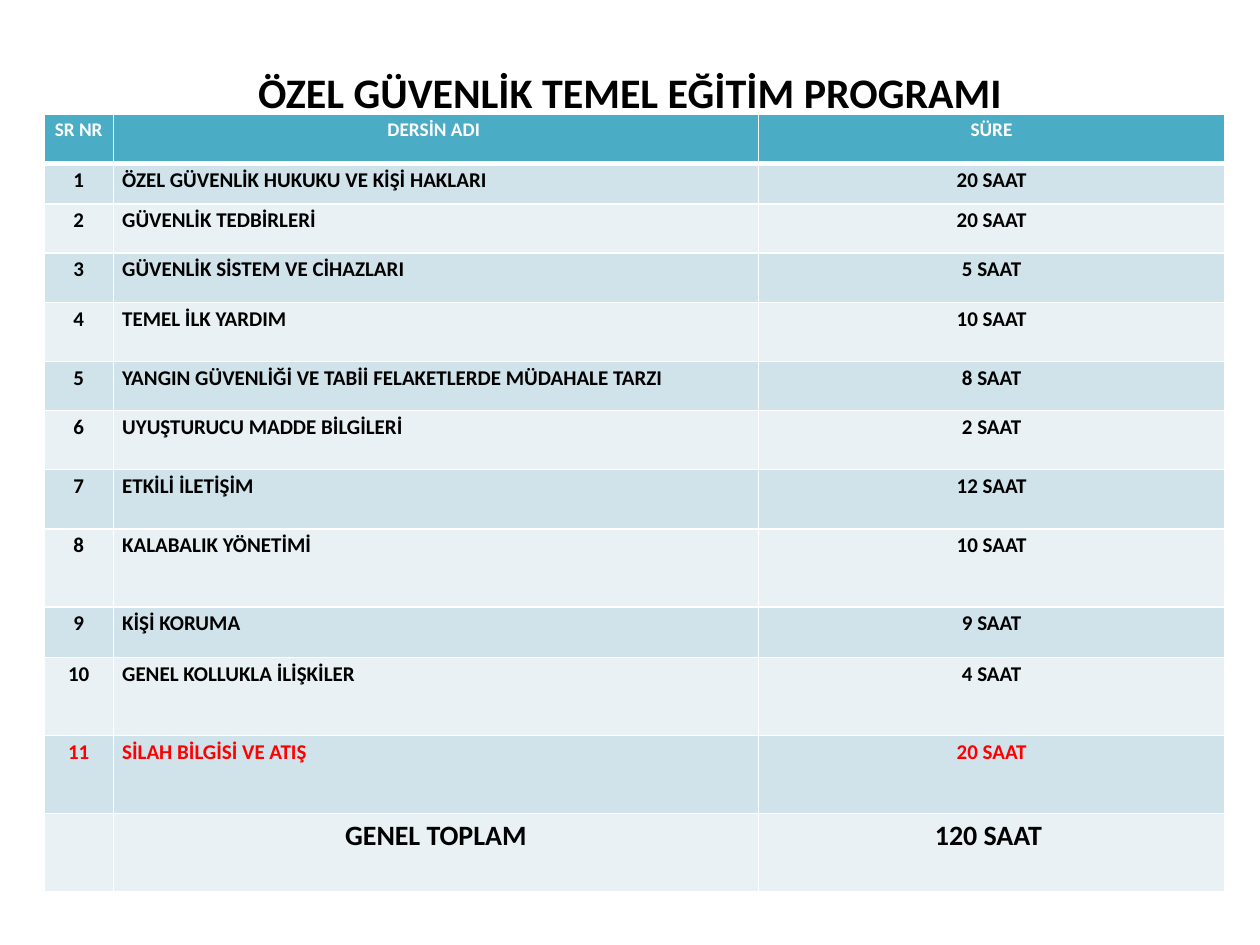
from dataclasses import dataclass

from lxml.etree import SubElement
from pptx import Presentation
from pptx.dml.color import RGBColor
from pptx.enum.text import MSO_ANCHOR as Anchor, PP_ALIGN as Align
from pptx.oxml import parse_xml
from pptx.oxml.ns import nsdecls, qn
from pptx.util import Inches, Pt

TITLE = "ÖZEL GÜVENLİK TEMEL EĞİTİM PROGRAMI"
HEADER = ("SR NR", "DERSİN ADI ", "SÜRE")
COURSES = [
    ("ÖZEL GÜVENLİK HUKUKU VE KİŞİ HAKLARI", 20),
    ("GÜVENLİK TEDBİRLERİ", 20),
    ("GÜVENLİK SİSTEM VE CİHAZLARI ", 5),
    ("TEMEL İLK YARDIM", 10),
    ("YANGIN GÜVENLİĞİ VE TABİİ FELAKETLERDE MÜDAHALE TARZI", 8),
    ("UYUŞTURUCU MADDE BİLGİLERİ", 2),
    ("ETKİLİ İLETİŞİM", 12),
    ("KALABALIK YÖNETİMİ", 10),
    ("KİŞİ KORUMA", 9),
    ("GENEL KOLLUKLA İLİŞKİLER", 4),
    ("SİLAH BİLGİSİ VE ATIŞ", 20),
]
TOTAL_LABEL = "GENEL TOPLAM"
COLUMN_WIDTHS = (0.55, 5.12, 3.7)
ROW_HEIGHTS = (0.39, 0.32, 0.39, 0.39, 0.47, 0.39, 0.47, 0.47, 0.62, 0.4, 0.62, 0.62, 0.62)


@dataclass(frozen=True)
class Theme:
    font: str = "Calibri"
    ink: str = "000000"
    white: str = "FFFFFF"
    accent: str = "FF0000"
    header: str = "4BACC6"
    bands: tuple = ("D0E3EA", "E9F1F5")
    title_size: int = 24
    header_size: int = 11
    body_size: int = 12
    total_size: int = 16


theme = Theme()


def write(para, text, size, color, align):
    para.alignment = align
    span = para.add_run()
    span.text = text
    span.font.name = theme.font
    span.font.size = Pt(size)
    span.font.bold = True
    span.font.color.rgb = RGBColor.from_string(color)


def add_borders(cell, bottom):
    props = cell._tc.get_or_add_tcPr()
    for index, (side, width) in enumerate((("L", 1), ("R", 1), ("T", 1), ("B", bottom))):
        line = parse_xml(f'<a:ln{side} {nsdecls("a")} w="{Pt(width)}"/>')
        fill = SubElement(line, qn("a:solidFill"))
        SubElement(fill, qn("a:srgbClr"), val=theme.white)
        props.insert(index, line)


def fill_cell(cell, text, fill, size, color, align, bottom=1):
    cell.fill.solid()
    cell.fill.fore_color.rgb = RGBColor.from_string(fill)
    cell.margin_left = cell.margin_right = Inches(0.07)
    cell.margin_top = cell.margin_bottom = 0
    add_borders(cell, bottom)
    if text:
        para = cell.text_frame.paragraphs[0]
        para.line_spacing = 1.15
        write(para, text, size, color, align)


def add_title(page):
    box = page.shapes.add_textbox(Inches(0.5), Inches(0.3), Inches(9), Inches(0.85))
    frame = box.text_frame
    frame.word_wrap = True
    frame.vertical_anchor = Anchor.MIDDLE
    write(frame.paragraphs[0], TITLE, theme.title_size, theme.ink, Align.CENTER)


def add_program(page):
    total = sum(hours for _, hours in COURSES)
    rows = [HEADER]
    rows += [(str(number), name, f"{hours} SAAT") for number, (name, hours) in enumerate(COURSES, 1)]
    rows.append(("", TOTAL_LABEL, f"{total} SAAT "))
    last = len(rows) - 1

    table = page.shapes.add_table(
        len(rows), len(HEADER), Inches(0.35), Inches(0.91),
        Inches(sum(COLUMN_WIDTHS)), Inches(sum(ROW_HEIGHTS)),
    ).table
    for column, width in zip(table.columns, COLUMN_WIDTHS):
        column.width = Inches(width)
    for row, height in zip(table.rows, ROW_HEIGHTS):
        row.height = Inches(height)

    for r, texts in enumerate(rows):
        fill, size, color = theme.bands[(r - 1) % 2], theme.body_size, theme.ink
        if r == 0:
            fill, size, color = theme.header, theme.header_size, theme.white
        elif r == last:
            size = theme.total_size
        elif r == last - 1:
            color = theme.accent
        for c, text in enumerate(texts):
            align = Align.JUSTIFY if c == 1 and 0 < r < last else Align.CENTER
            fill_cell(table.cell(r, c), text, fill, size, color, align, 3 if r == 0 else 1)


def main():
    deck = Presentation()
    deck.slide_width, deck.slide_height = Inches(10), Inches(7.5)
    page = deck.slides.add_slide(deck.slide_layouts[6])
    add_title(page)
    add_program(page)
    deck.save("out.pptx")


if __name__ == "__main__":
    main()
